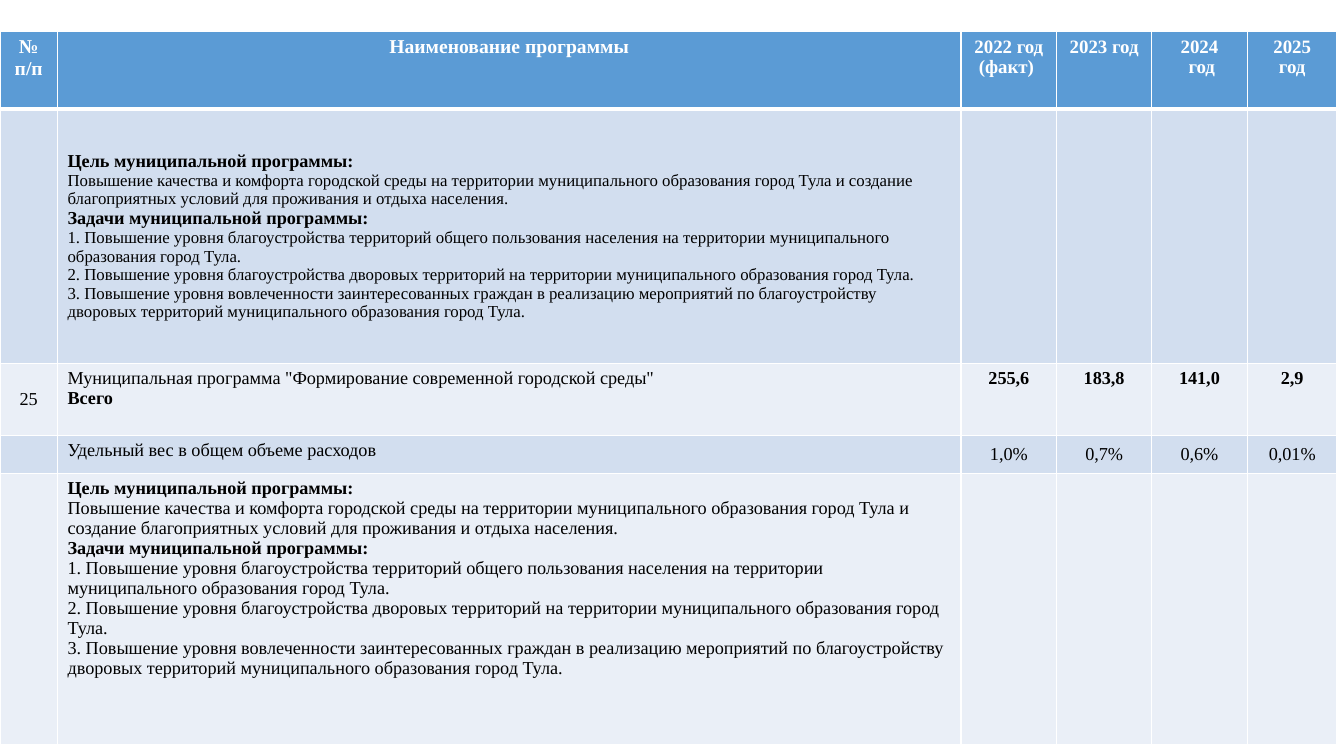
from dataclasses import dataclass

import lxml.etree
import pptx
import pptx.dml.color
import pptx.enum.text
import pptx.oxml.ns
import pptx.table
import pptx.util

ALIGN = pptx.enum.text.PP_ALIGN
ANCHOR = pptx.enum.text.MSO_ANCHOR


@dataclass(frozen=True)
class Theme:
    font: str = "Times New Roman"
    header_fill: str = "5B9BD5"
    band_fills: tuple[str, str] = ("D2DEEF", "EAEFF7")
    line: str = "FFFFFF"
    header_text: str = "FFFFFF"
    body_text: str = "000000"
    title_size: float = 14
    year_size: float = 13.5
    body_size: float = 13
    small_size: float = 12
    thin: float = 1
    thick: float = 3


@dataclass(frozen=True)
class Line:
    text: str
    size: float
    bold: bool = False


@dataclass(frozen=True)
class Entry:
    lines: tuple[Line, ...] = ()
    centred: bool = True
    middle: bool = False


THEME = Theme()
SLIDE_W, SLIDE_H = pptx.util.Inches(13.33), pptx.util.Inches(7.5)
TOP_SHARE = 4.13
COLUMN_SHARES = (4.28, 67.22, 7.13, 7.05, 7.13, 6.68)
ROW_SHARES = (10.27, 33.73, 9.47, 5.07, 35.87)

GOAL = (
    "Повышение качества и комфорта городской среды на территории муниципального "
    "образования город Тула и создание благоприятных условий для проживания и отдыха населения."
)
TASKS = (
    "1. Повышение уровня благоустройства территорий общего пользования населения "
    "на территории муниципального образования город Тула.",
    "2. Повышение уровня благоустройства дворовых территорий на территории "
    "муниципального образования город Тула.",
    "3. Повышение уровня вовлеченности заинтересованных граждан в реализацию мероприятий "
    "по благоустройству дворовых территорий муниципального образования город Тула.",
)


def share(total: int, percent: float) -> int:
    return round(total * percent / 100)


def heading(size: float, *texts: str) -> Entry:
    return Entry(tuple(Line(text, size, True) for text in texts))


def value(text: str, bold: bool = False, middle: bool = False) -> Entry:
    return Entry((Line(text, THEME.body_size, bold),), middle=middle)


def description(size: float, middle: bool = False) -> Entry:
    lines = (
        Line("Цель муниципальной программы:", THEME.body_size, True),
        Line(GOAL, size),
        Line("Задачи муниципальной программы:", THEME.body_size, True),
        *(Line(task, size) for task in TASKS),
    )
    return Entry(lines, centred=False, middle=middle)


def description_row(entry: Entry) -> list[Entry]:
    return [Entry(), entry] + [Entry()] * 4


def programme_rows() -> list[list[Entry]]:
    header = [
        heading(THEME.title_size, "№ п/п"),
        heading(THEME.title_size, "Наименование программы"),
        heading(THEME.year_size, "2022 год (факт) "),
        heading(THEME.year_size, "2023 год"),
        heading(THEME.year_size, "2024", " год"),
        heading(THEME.year_size, "2025", "год"),
    ]
    programme = Entry(
        (
            Line('Муниципальная программа "Формирование современной городской среды"', THEME.body_size),
            Line("Всего", THEME.body_size, True),
        ),
        centred=False,
    )
    weight = Entry((Line("Удельный вес в общем объеме расходов", THEME.body_size),), centred=False)
    totals = [value(text, bold=True) for text in ("255,6", "183,8", "141,0", "2,9")]
    weights = [value(text, middle=True) for text in ("1,0%", "0,7%", "0,6%", "0,01%")]
    return [
        header,
        description_row(description(THEME.small_size, middle=True)),
        [value("25", middle=True), programme, *totals],
        [Entry(), weight, *weights],
        description_row(description(THEME.body_size)),
    ]


def set_borders(cell: pptx.table._Cell, bottom: float) -> None:
    qn = pptx.oxml.ns.qn
    tcPr = cell._tc.get_or_add_tcPr()
    widths = {"a:lnL": THEME.thin, "a:lnR": THEME.thin, "a:lnT": THEME.thin, "a:lnB": bottom}
    for tag, width in widths.items():
        ln = lxml.etree.SubElement(tcPr, qn(tag), w=str(pptx.util.Pt(width)))
        fill = lxml.etree.SubElement(ln, qn("a:solidFill"))
        lxml.etree.SubElement(fill, qn("a:srgbClr"), val=THEME.line)


def write_entry(cell: pptx.table._Cell, entry: Entry, color: str) -> None:
    tf = cell.text_frame
    cell.vertical_anchor = ANCHOR.MIDDLE if entry.middle else ANCHOR.TOP
    if not entry.lines:
        size = str(round(THEME.body_size * 100))
        lxml.etree.SubElement(tf.paragraphs[0]._p, pptx.oxml.ns.qn("a:endParaRPr"), sz=size)
    for i, line in enumerate(entry.lines):
        p = tf.add_paragraph() if i else tf.paragraphs[0]
        p.alignment = ALIGN.CENTER if entry.centred else ALIGN.LEFT
        r = p.add_run()
        r.text = line.text
        r.font.name = THEME.font
        r.font.size = pptx.util.Pt(line.size)
        r.font.bold = line.bold
        r.font.color.rgb = pptx.dml.color.RGBColor.from_string(color)


def draw_table(s: pptx.slide.Slide, rows: list[list[Entry]]) -> None:
    widths = [share(SLIDE_W, percent) for percent in COLUMN_SHARES]
    heights = [share(SLIDE_H, percent) for percent in ROW_SHARES]
    frame = s.shapes.add_table(
        len(heights), len(widths), 0, share(SLIDE_H, TOP_SHARE), sum(widths), sum(heights)
    )
    table = frame.table
    table.first_row = table.horz_banding = False
    for column, width in zip(table.columns, widths):
        column.width = width
    for i, (row, height, entries) in enumerate(zip(table.rows, heights, rows)):
        row.height = height
        fill = THEME.band_fills[(i - 1) % 2] if i else THEME.header_fill
        color = THEME.body_text if i else THEME.header_text
        for cell, entry in zip(row.cells, entries):
            set_borders(cell, THEME.thin if i else THEME.thick)
            cell.fill.solid()
            cell.fill.fore_color.rgb = pptx.dml.color.RGBColor.from_string(fill)
            write_entry(cell, entry, color)


def main() -> None:
    prs = pptx.Presentation()
    prs.slide_width, prs.slide_height = SLIDE_W, SLIDE_H
    s = prs.slides.add_slide(prs.slide_layouts[6])
    draw_table(s, programme_rows())
    prs.save("out.pptx")


if __name__ == "__main__":
    main()
